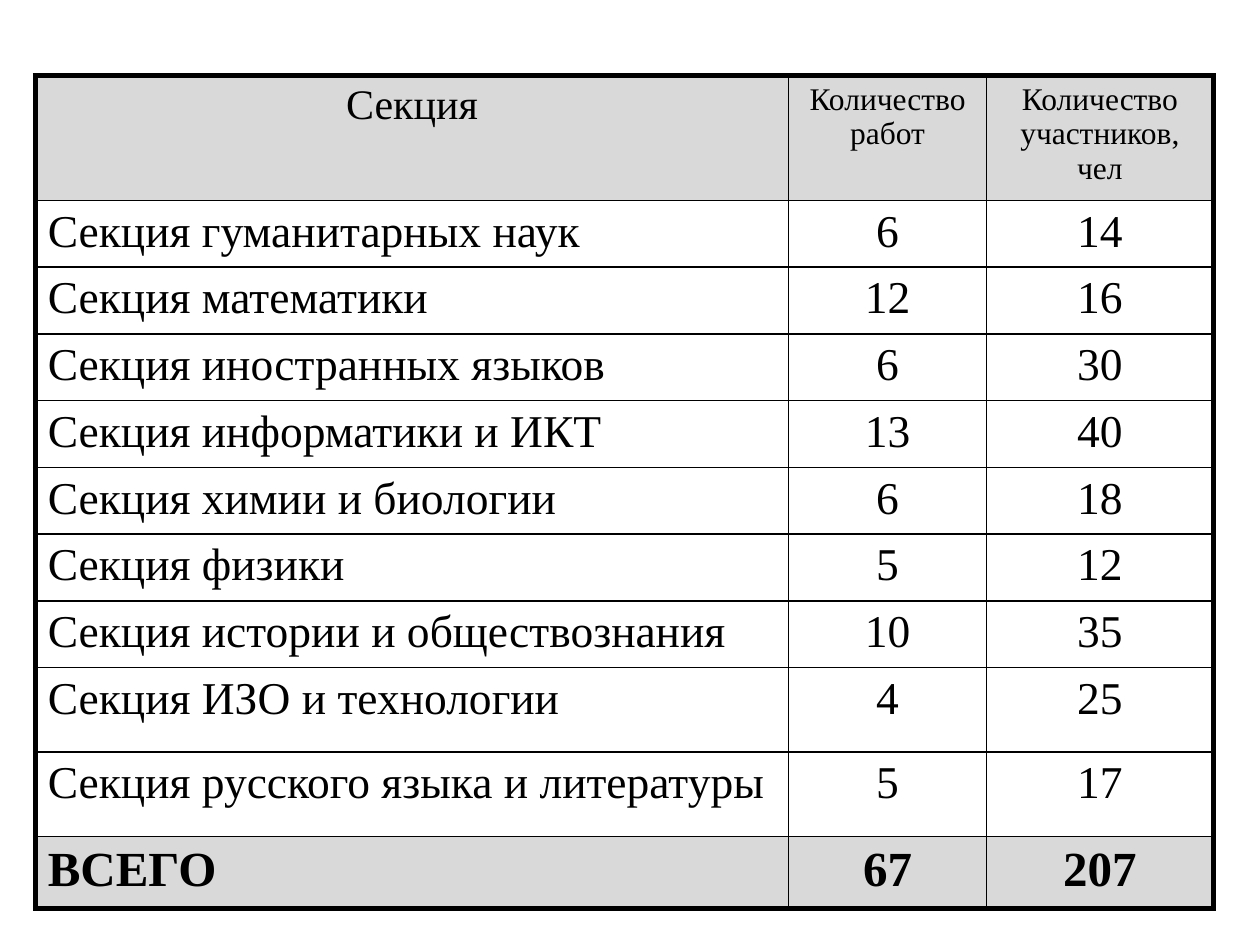
from lxml import etree
from pptx import Presentation
from pptx import util as u
from pptx.dml.color import RGBColor
from pptx.enum import text
from pptx.oxml import ns

BLACK = RGBColor(0x00, 0x00, 0x00)
GREY = RGBColor(0xD9, 0xD9, 0xD9)
FONT = "Times New Roman"
THIN, THICK = 1, 3

HEAD = [["Секция"], ["Количество работ"], ["Количество", "участников, чел"]]
BODY = [
    ("Секция гуманитарных наук", 6, 14),
    ("Секция математики", 12, 16),
    ("Секция иностранных языков", 6, 30),
    ("Секция информатики и ИКТ", 13, 40),
    ("Секция химии и биологии", 6, 18),
    ("Секция физики", 5, 12),
    ("Секция истории и обществознания", 10, 35),
    ("Секция ИЗО и технологии", 4, 25),
    ("Секция русского языка и литературы", 5, 17),
]
TOTAL = ("ВСЕГО", 67, 207)
WIDTHS = [5.98, 1.57, 1.8]
HEIGHTS = [0.99] + [0.53] * 7 + [0.67] * 2 + [0.57]


class Deck:
    def __init__(self):
        self.file = Presentation()
        self.file.slide_width = u.Inches(10)
        self.file.slide_height = u.Inches(7.5)
        self.slide = self.file.slides.add_slide(self.file.slide_layouts[6])

    def table(self, left, top, widths, heights):
        grid = self.slide.shapes.add_table(
            len(heights), len(widths), u.Inches(left), u.Inches(top),
            u.Inches(sum(widths)), u.Inches(sum(heights))).table
        grid.first_row = grid.horz_banding = False
        for col, width in zip(grid.columns, widths):
            col.width = u.Inches(width)
        for row, height in zip(grid.rows, heights):
            row.height = u.Inches(height)
        return grid

    def border(self, cell, sides):
        props = cell._tc.get_or_add_tcPr()
        for side, width in sides.items():
            line = etree.SubElement(props, ns.qn(f"a:ln{side}"), w=str(u.Pt(width)))
            fill = etree.SubElement(line, ns.qn("a:solidFill"))
            etree.SubElement(fill, ns.qn("a:srgbClr"), val=str(BLACK))

    def cell(self, cell, lines, size, align, bold=False, fill=None):
        if fill is None:
            cell.fill.background()
        else:
            cell.fill.solid()
            cell.fill.fore_color.rgb = fill
        frame = cell.text_frame
        for i, line in enumerate(lines):
            para = frame.add_paragraph() if i else frame.paragraphs[0]
            para.alignment = align
            run = para.add_run()
            run.text = line
            run.font.name = FONT
            run.font.size = u.Pt(size)
            run.font.bold = bold
            run.font.color.rgb = BLACK


def main():
    deck = Deck()
    grid = deck.table(0.28, 0.6, WIDTHS, HEIGHTS)
    rows = [HEAD] + [[[str(item)] for item in row] for row in BODY + [TOTAL]]
    end, edge = len(rows) - 1, len(WIDTHS) - 1
    for r, row in enumerate(rows):
        for c, lines in enumerate(row):
            cell = grid.cell(r, c)
            deck.border(cell, {
                "L": THIN if c else THICK,
                "R": THICK if c == edge else THIN,
                "T": THIN if r else THICK,
                "B": THICK if r == end else THIN,
            })
            if r == 0:
                size = 18 if c else 24
            else:
                size = 28 if r == end else 26
            left = r > 0 and c == 0
            align = text.PP_ALIGN.LEFT if left else text.PP_ALIGN.CENTER
            fill = GREY if r in (0, end) else None
            deck.cell(cell, lines, size, align, r == end, fill)
    deck.file.save("out.pptx")


if __name__ == "__main__":
    main()
